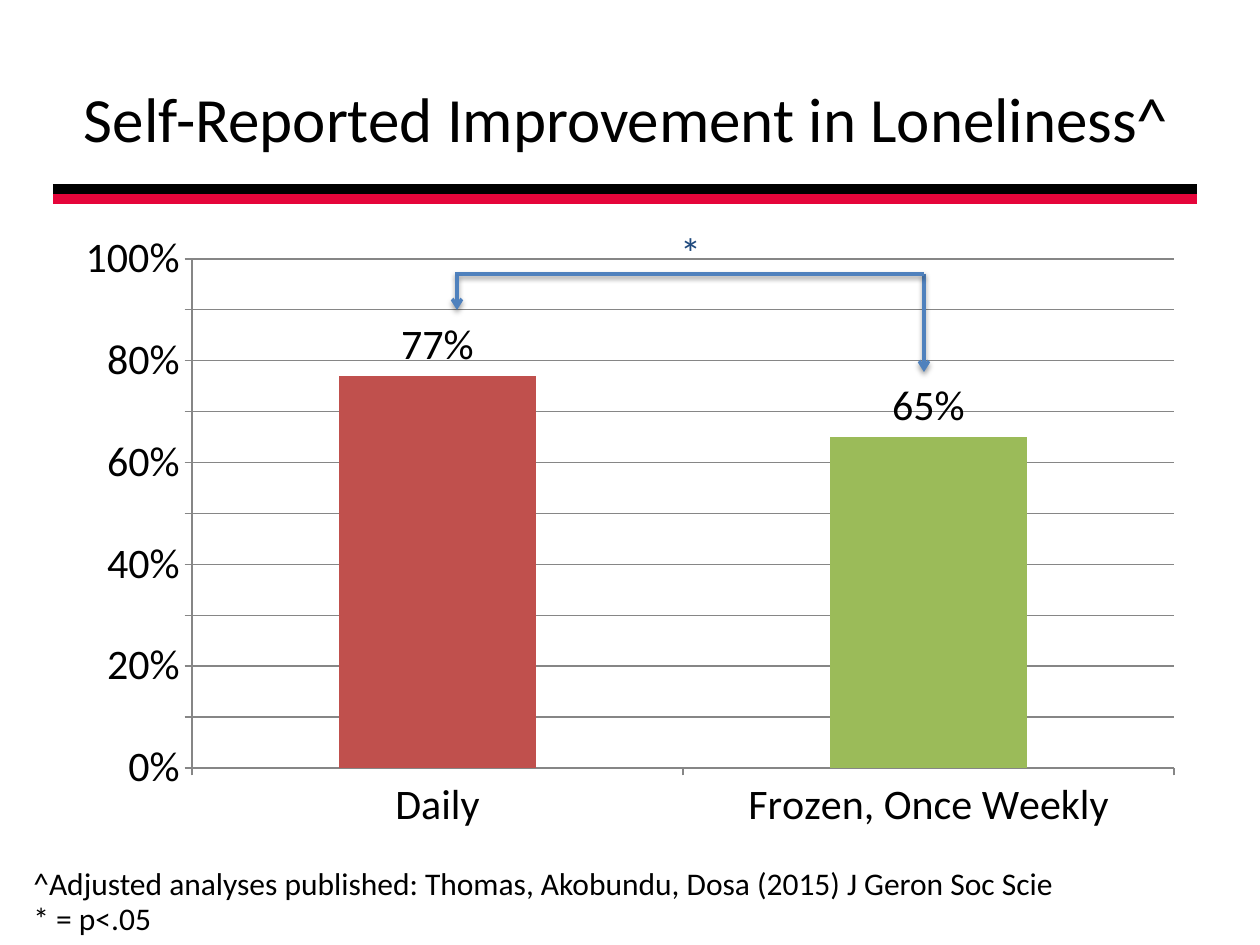
from dataclasses import dataclass
from lxml import etree
from pptx import Presentation
from pptx.chart.data import CategoryChartData
from pptx.dml.color import RGBColor
from pptx.enum.chart import XL_CHART_TYPE, XL_LABEL_POSITION, XL_TICK_MARK
from pptx.enum.shapes import MSO_CONNECTOR
from pptx.enum.text import MSO_ANCHOR, PP_ALIGN
from pptx.oxml import parse_xml
from pptx.oxml.ns import nsdecls, qn
from pptx.util import Emu, Pt


@dataclass(frozen=True)
class Theme:
    font: str = "Calibri"
    ink: str = "000000"
    band: str = "E5053A"
    mark: str = "1F497D"
    link: str = "4F81BD"
    grid: str = "868686"
    bars: tuple = ("C0504D", "9BBB59")
    head: int = 36
    body: int = 24
    note: int = 18


def px(num):
    return Emu(round(num * 914400 / 126))


def rgb(code):
    return RGBColor.from_string(code)


def style(font, face, size, color):
    font.name = face
    font.size = Pt(size)
    font.color.rgb = rgb(color)


def write(frame, text, face, size, color, align=PP_ALIGN.LEFT, anchor=MSO_ANCHOR.TOP):
    frame.word_wrap = True
    frame.vertical_anchor = anchor
    para = frame.paragraphs[0]
    para.alignment = align
    run = para.add_run()
    run.text = text
    style(run.font, face, size, color)


class Deck:
    def __init__(self, theme):
        self.theme = theme
        self.file = Presentation()
        self.file.slide_width = px(1260)
        self.file.slide_height = px(945)
        self.slide = self.file.slides.add_slide(self.file.slide_layouts[6])

    def text(self, text, box, size, color=None, **form):
        shape = self.slide.shapes.add_textbox(*map(px, box))
        write(shape.text_frame, text, self.theme.font, size,
              color or self.theme.ink, **form)

    def line(self, start, end, color, width, arrow=False, shade=False):
        shape = self.slide.shapes.add_connector(
            MSO_CONNECTOR.STRAIGHT, *map(px, start + end))
        shape.line.color.rgb = rgb(color)
        shape.line.width = Pt(width)
        if arrow:
            etree.SubElement(shape.line._get_or_add_ln(), qn("a:tailEnd"), type="arrow")
        glow = etree.SubElement(shape._element.spPr, qn("a:effectLst"))
        if shade:
            cast = etree.SubElement(
                glow, qn("a:outerShdw"), blurRad=str(Pt(3.1)), dist=str(Pt(1.6)),
                dir="5400000", rotWithShape="0")
            tint = etree.SubElement(cast, qn("a:srgbClr"), val=self.theme.ink)
            etree.SubElement(tint, qn("a:alpha"), val="38000")

    def chart(self, names, values, box, plot):
        theme = self.theme
        data = CategoryChartData(number_format="0%")
        data.categories = names
        data.add_series("Series 1", values)
        chart = self.slide.shapes.add_chart(
            XL_CHART_TYPE.COLUMN_CLUSTERED, *map(px, box), data).chart
        chart.has_legend = False
        chart.has_title = False
        style(chart.font, theme.font, theme.body, theme.ink)
        self.axes(chart)
        self.bars(chart.plots[0])
        self.place(chart, box, plot)

    def axes(self, chart):
        scale = chart.value_axis
        scale.minimum_scale, scale.maximum_scale = 0, 1
        scale.major_unit = 0.1
        scale.has_major_gridlines = True
        scale.tick_labels.number_format = "0%"
        scale.tick_labels.number_format_is_linked = False
        for axis in (scale, chart.category_axis):
            axis.major_tick_mark = XL_TICK_MARK.OUTSIDE
            axis.minor_tick_mark = XL_TICK_MARK.NONE
        for part in (scale, chart.category_axis, scale.major_gridlines):
            part.format.line.color.rgb = rgb(self.theme.grid)
            part.format.line.width = Pt(0.75)

    def bars(self, plot):
        theme = self.theme
        plot.gap_width = 150
        plot.vary_by_categories = False
        row = plot.series[0]
        for spot, color in enumerate(theme.bars):
            fill = row.points[spot].format.fill
            fill.solid()
            fill.fore_color.rgb = rgb(color)
        tags = row.data_labels
        tags.show_value = True
        tags.number_format = "0%"
        tags.number_format_is_linked = False
        tags.position = XL_LABEL_POSITION.OUTSIDE_END
        style(tags.font, theme.font, theme.body, theme.ink)

    def place(self, chart, box, plot):
        area = chart._chartSpace.find(".//" + qn("c:plotArea"))
        for old in area.findall(qn("c:layout")):
            area.remove(old)
        left, top, width, height = box
        ratio = {
            "x": (plot[0] - left) / width, "y": (plot[1] - top) / height,
            "w": plot[2] / width, "h": plot[3] / height}
        modes = '<c:xMode val="edge"/><c:yMode val="edge"/>'
        sides = "".join(f'<c:{key} val="{val:.4f}"/>' for key, val in ratio.items())
        area.insert(0, parse_xml(
            f'<c:layout {nsdecls("c")}><c:manualLayout><c:layoutTarget val="inner"/>'
            f'{modes}{sides}</c:manualLayout></c:layout>'))


def main():
    theme = Theme()
    deck = Deck(theme)
    for level, color in ((189, theme.ink), (199, theme.band)):
        deck.line((53, level), (1197, level), color, 6)
    deck.chart(("Daily", "Frozen, Once Weekly"), (0.77, 0.65),
               (63, 220, 1134, 624), (192, 259, 982, 509))
    deck.line((924, 274), (924, 372), theme.link, 2, arrow=True, shade=True)
    deck.line((455, 274), (924, 274), theme.link, 2, shade=True)
    deck.text("*", (611, 220, 159, 50), theme.body, theme.mark, align=PP_ALIGN.CENTER)
    deck.line((457, 276), (457, 310), theme.link, 2, arrow=True, shade=True)
    deck.text("Self-Reported Improvement in Loneliness^", (30, 38, 1193, 158),
              theme.head, align=PP_ALIGN.CENTER, anchor=MSO_ANCHOR.MIDDLE)
    deck.text("^Adjusted analyses published: Thomas, Akobundu, Dosa (2015) J Geron Soc Scie",
              (21, 858, 1068, 50), theme.note)
    deck.text("* = p<.05", (21, 893, 989, 50), theme.note)
    deck.file.save("out.pptx")


if __name__ == "__main__":
    main()
